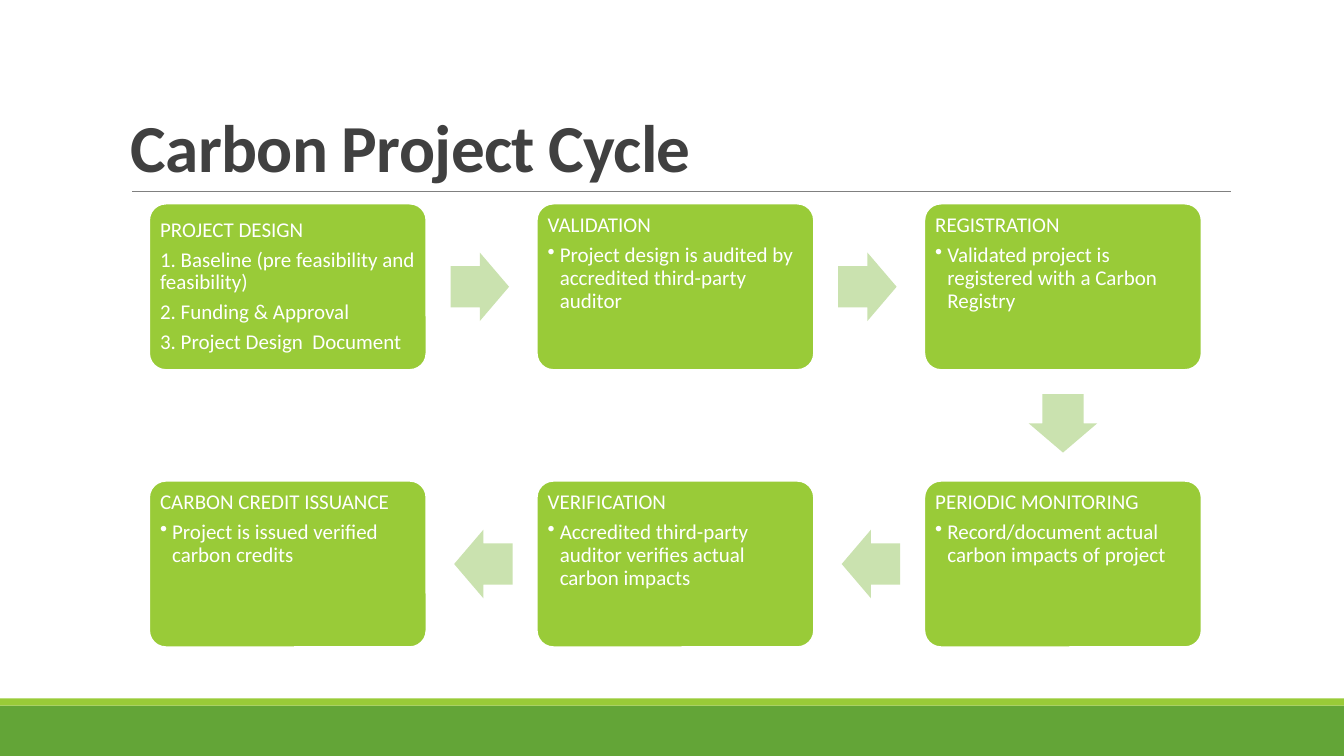
from lxml import etree
from pptx import Presentation
from pptx.dml.color import RGBColor
from pptx.enum import shapes, text
from pptx.oxml.ns import qn
from pptx.util import Inches, Pt

TITLE = "Carbon Project Cycle"
# heading, bulleted, lines, (column, row), direction to the next stage
STAGES = [
    ("PROJECT DESIGN", False,
     ["1. Baseline (pre feasibility and feasibility)",
      "2. Funding & Approval",
      "3. Project Design  Document"], (0, 0), "right"),
    ("VALIDATION", True,
     ["Project design is audited by accredited third-party auditor"],
     (1, 0), "right"),
    ("REGISTRATION", True,
     ["Validated project is registered with a Carbon Registry"],
     (2, 0), "down"),
    ("PERIODIC MONITORING", True,
     ["Record/document actual carbon impacts of project"], (2, 1), "left"),
    ("VERIFICATION", True,
     ["Accredited third-party auditor verifies actual carbon impacts"],
     (1, 1), "left"),
    ("CARBON CREDIT ISSUANCE", True,
     ["Project is issued verified carbon credits"], (0, 1), None),
]
# direction: x step, y step, rotation
DIRECTIONS = {"right": (1, 0, 0), "down": (0, 1, 90), "left": (-1, 0, 180)}

FONT = "Calibri"
WHITE = RGBColor(0xFF, 0xFF, 0xFF)
DARK = RGBColor(0x40, 0x40, 0x40)
GRAY = RGBColor(0x80, 0x80, 0x80)
GREEN = RGBColor(0x63, 0xA5, 0x37)
LIME = RGBColor(0x99, 0xCB, 0x38)
PALE = RGBColor(0xCA, 0xE2, 0xAF)

LEFT, TOP = 1.48, 2.02
PITCH_X, PITCH_Y = 3.845, 2.75
BOX_W, BOX_H = 2.75, 1.65
ARROW_W, ARROW_H, ARROW_GAP = 0.58, 0.68, 0.24

prs = Presentation()
prs.slide_width, prs.slide_height = Inches(13.333), Inches(7.5)
slide = prs.slides.add_slide(prs.slide_layouts[6])


def add_solid(preset, x, y, w, h, color):
    shape = slide.shapes.add_shape(
        preset, Inches(x), Inches(y), Inches(w), Inches(h))
    shape.shadow.inherit = False
    shape.fill.solid()
    shape.fill.fore_color.rgb = color
    shape.line.fill.background()
    return shape


def style(paragraph, size, color, spacing):
    paragraph.alignment = text.PP_ALIGN.LEFT
    paragraph.line_spacing = spacing
    paragraph.font.name = FONT
    paragraph.font.size = Pt(size)
    paragraph.font.color.rgb = color


def add_bullet(paragraph):
    props = paragraph._p.get_or_add_pPr()
    props.set("marL", str(Inches(0.12)))
    props.set("indent", str(Inches(-0.12)))
    bullet = etree.Element(qn("a:buChar"), char="•")
    props.find(qn("a:defRPr")).addprevious(bullet)


def add_stage(x, y, heading, bulleted, lines):
    box = add_solid(shapes.MSO_SHAPE.ROUNDED_RECTANGLE, x, y, BOX_W, BOX_H, LIME)
    box.adjustments[0] = 0.1
    box.line.color.rgb = WHITE
    box.line.width = Pt(1.25)
    frame = box.text_frame
    frame.word_wrap = True
    frame.margin_left = frame.margin_right = Inches(0.06)
    frame.margin_top = frame.margin_bottom = Inches(0.06)
    frame.vertical_anchor = (
        text.MSO_ANCHOR.TOP if bulleted else text.MSO_ANCHOR.MIDDLE)
    frame.text = "\n".join([heading, *lines])
    for number, paragraph in enumerate(frame.paragraphs):
        style(paragraph, 15, WHITE, 0.9)
        is_bullet = bulleted and number > 0
        paragraph.space_after = Pt(2.25 if is_bullet else 5.25)
        if is_bullet:
            add_bullet(paragraph)


def add_arrow(x, y, direction):
    """Place an arrow a fixed gap beyond the side of the box at x, y."""
    step_x, step_y, rotation = DIRECTIONS[direction]
    reach = ARROW_GAP + ARROW_W / 2
    center_x = x + BOX_W / 2 + step_x * (BOX_W / 2 + reach)
    center_y = y + BOX_H / 2 + step_y * (BOX_H / 2 + reach)
    arrow = add_solid(shapes.MSO_SHAPE.RIGHT_ARROW, center_x - ARROW_W / 2,
                      center_y - ARROW_H / 2, ARROW_W, ARROW_H, PALE)
    arrow.adjustments[0] = 0.6
    arrow.adjustments[1] = 0.5
    arrow.rotation = rotation


add_solid(shapes.MSO_SHAPE.RECTANGLE, 0, 7, 13.333, 0.5, GREEN)
add_solid(shapes.MSO_SHAPE.RECTANGLE, 0, 6.93, 13.333, 0.07, LIME)

rule = slide.shapes.add_connector(
    shapes.MSO_CONNECTOR.STRAIGHT,
    Inches(1.31), Inches(1.9), Inches(12.21), Inches(1.9))
rule.line.color.rgb = GRAY
rule.line.width = Pt(0.5)
etree.SubElement(rule._element.spPr, qn("a:effectLst"))

title = slide.shapes.add_textbox(
    Inches(1.2), Inches(0.31), Inches(11), Inches(1.59)).text_frame
title.word_wrap = True
title.vertical_anchor = text.MSO_ANCHOR.BOTTOM
title.text = TITLE
headline = title.paragraphs[0]
style(headline, 48, DARK, 0.85)
headline.font.bold = True
headline.runs[0]._r.get_or_add_rPr().set("spc", "-50")

for heading, bulleted, lines, (column, row), direction in STAGES:
    x, y = LEFT + column * PITCH_X, TOP + row * PITCH_Y
    add_stage(x, y, heading, bulleted, lines)
    if direction:
        add_arrow(x, y, direction)

prs.save("out.pptx")
